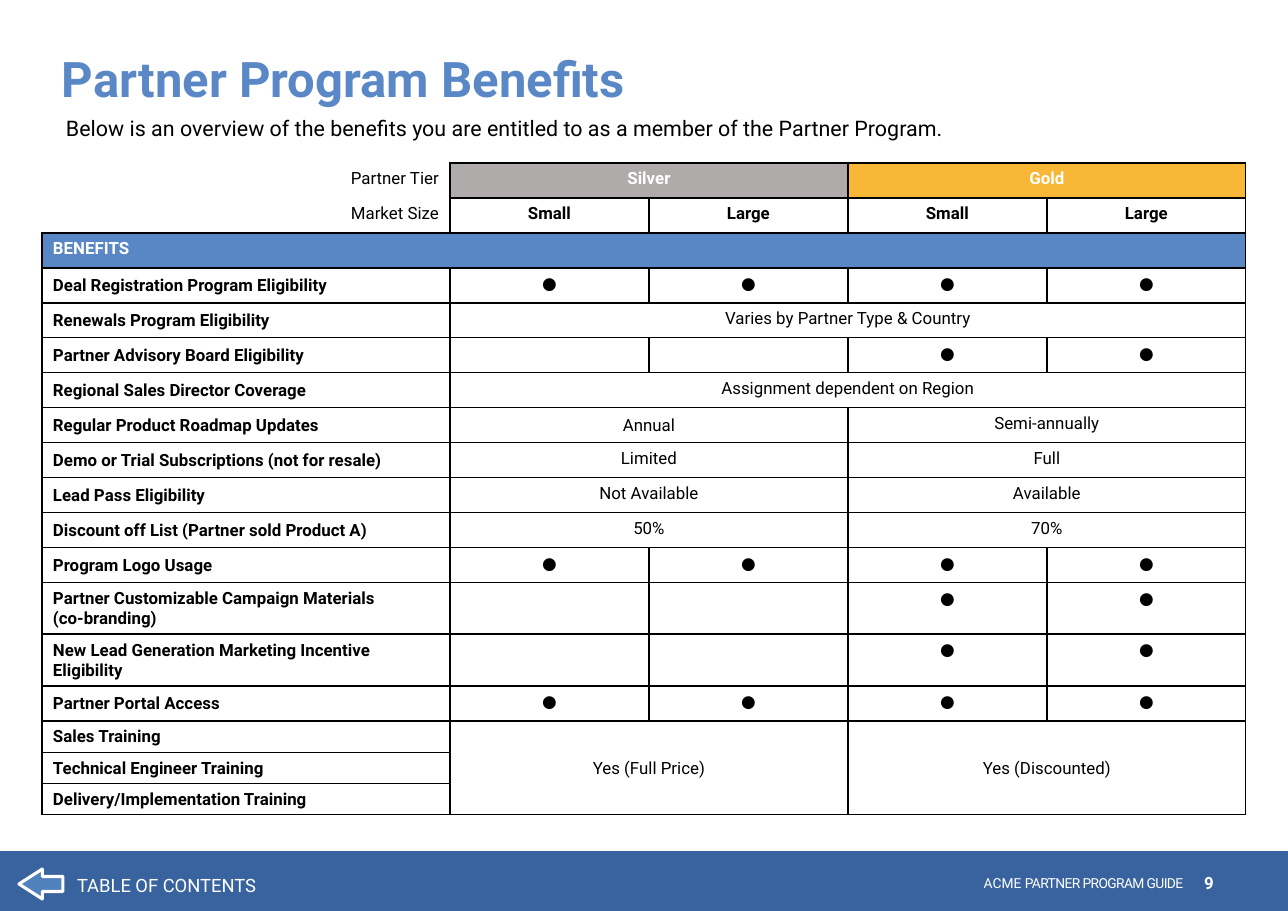
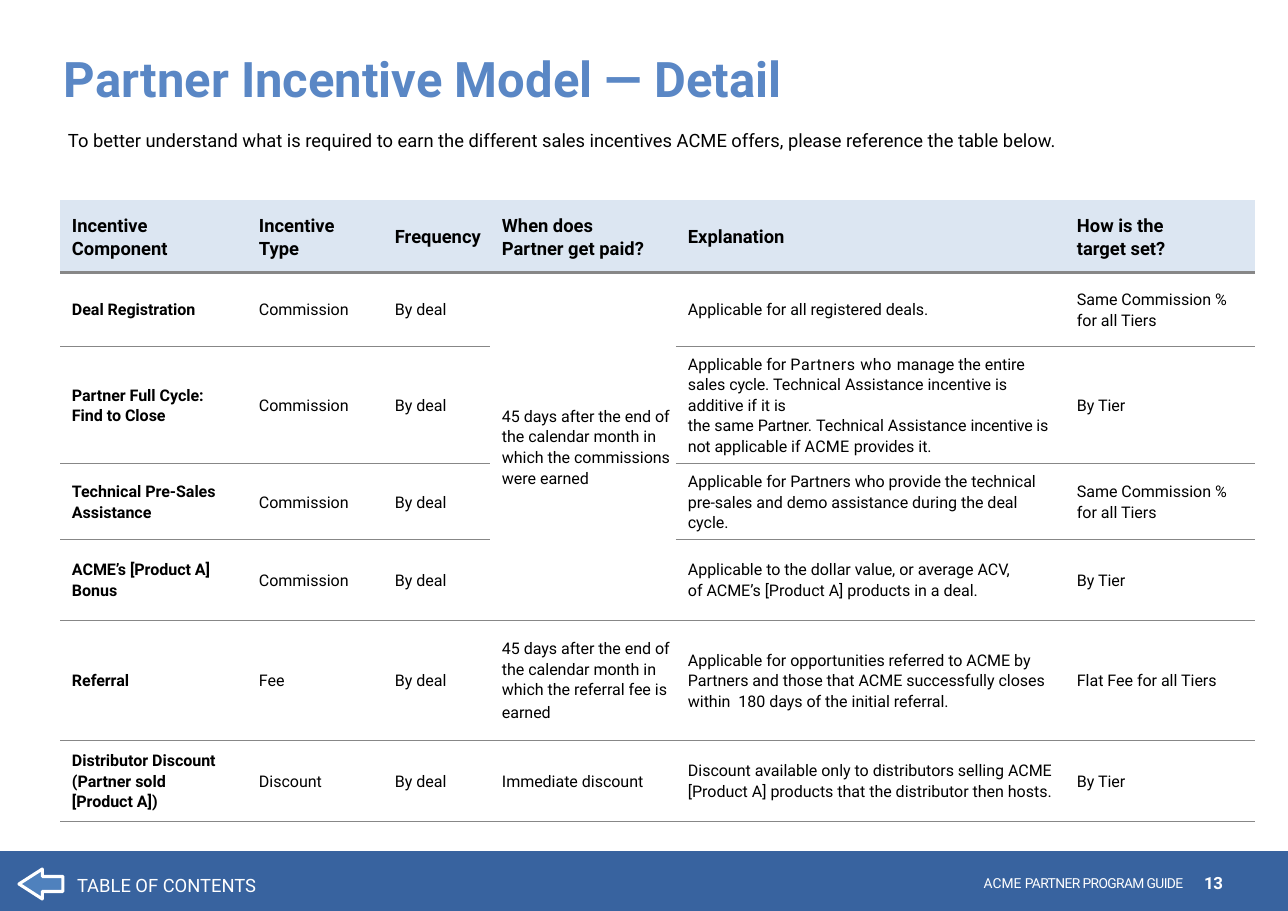
from pptx import Presentation
from pptx.dml.color import RGBColor
from pptx.enum.shapes import MSO_SHAPE
from pptx.enum.text import MSO_ANCHOR, MSO_AUTO_SIZE, PP_ALIGN
from pptx.oxml.ns import qn
from pptx.util import Emu, Pt
from lxml import etree

EMU_PX = 914400 / 110.2
WIDTH, HEIGHT = 1288, 911
FONT = "Roboto"
NO_GRID = "{2D5ABB26-0587-4C30-8999-92F81FD0307C}"
LEFT, CENTER, RIGHT = PP_ALIGN.LEFT, PP_ALIGN.CENTER, PP_ALIGN.RIGHT
TOP, MIDDLE = MSO_ANCHOR.TOP, MSO_ANCHOR.MIDDLE
RECT, ARROW = MSO_SHAPE.RECTANGLE, MSO_SHAPE.LEFT_ARROW
COLORS = {
    "title": "5A87C5", "band": "38639F", "arrow": "4F81BD", "white": "FFFFFF",
    "black": "000000", "silver": "AFABAB", "gold": "F8B737",
    "section": "5987C6", "head": "DCE6F2", "rule": "878787",
}

DOTS = ["●"] * 4
GOLD_DOTS = ["", "", "●", "●"]
# Each row: label, then values that share the four market columns evenly.
BENEFITS = [
    ("Deal Registration Program Eligibility", DOTS),
    ("Renewals Program Eligibility", ["Varies by Partner Type & Country"]),
    ("Partner Advisory Board Eligibility", GOLD_DOTS),
    ("Regional Sales Director Coverage", ["Assignment dependent on Region"]),
    ("Regular Product Roadmap Updates", ["Annual", "Semi-annually"]),
    ("Demo or Trial Subscriptions (not for resale)", ["Limited", "Full"]),
    ("Lead Pass Eligibility", ["Not Available", "Available"]),
    ("Discount off List (Partner sold Product A)", ["50%", "70%"]),
    ("Program Logo Usage", DOTS),
    (["Partner Customizable Campaign Materials", "(co-branding)"], GOLD_DOTS),
    ("New Lead Generation Marketing Incentive Eligibility", GOLD_DOTS),
    ("Partner Portal Access", DOTS),
    ("Sales Training", ["Yes (Full Price)", "Yes (Discounted)"]),
    ("Technical Engineer Training", []),
    ("Delivery/Implementation Training", []),
]

HEADS = ["Incentive Component", "Incentive Type", "Frequency",
         "When does\nPartner get paid?", "Explanation", "How is the\ntarget set?"]
SAME = "Same Commission %\nfor all Tiers"
FULL_CYCLE = [
    [("Applicable for ", 0), ("Partners who ", 0.4), ("manage the entire sales ", 0),
     ("cycle. ", -0.1), ("Technical Assistance incentive is additive if it ", 0),
     ("is", -0.2)],
    [("the same ", 0), ("Partner. ", -0.1), ("Technical Assistance ", 0),
     ("incentive is not ", -0.1), ("applicable if ", 0), ("ACME ", 0.2),
     ("provides it.", 0)],
]
# Each row: component, type, time of pay, explanation, target.
INCENTIVES = [
    ("Deal Registration", "Commission",
     "45 days after the end of the calendar month in which the commissions were earned",
     "Applicable for all registered deals.", SAME),
    (["Partner Full Cycle:", "Find to Close"], "Commission", "", FULL_CYCLE, "By Tier"),
    ("Technical Pre-Sales Assistance", "Commission", "",
     "Applicable for Partners who provide the technical\n"
     "pre-sales and demo assistance during the deal cycle.", SAME),
    ("ACME’s [Product A] Bonus", "Commission", "",
     "Applicable to the dollar value, or average ACV,\n"
     "of ACME’s [Product A] products in a deal.", "By Tier"),
    ("Referral", "Fee",
     ["45 days after the end of the calendar month in which the referral fee is", "earned"],
     "Applicable for opportunities referred to ACME by Partners and those that ACME "
     "successfully closes within  180 days of the initial referral.",
     "Flat Fee for all Tiers"),
    ("Distributor Discount (Partner sold\n[Product A])", "Discount", "Immediate discount",
     "Discount available only to distributors selling ACME [Product A] products "
     "that the distributor then hosts.", "By Tier"),
]


def px(num):
    return Emu(round(num * EMU_PX))


def rgb(name):
    return RGBColor.from_string(COLORS[name])


def write(frame, text, size, color="black", bold=False, align=LEFT, lead=None, gap=0):
    """Fill a frame; a list holds paragraphs, a nested list (run, spacing) pairs."""
    paras = text if isinstance(text, list) else [text]
    for i, part in enumerate(paras):
        para = frame.add_paragraph() if i else frame.paragraphs[0]
        if isinstance(part, list):
            for words, space in part:
                run = para.add_run()
                run.text = words
                run._r.get_or_add_rPr().set("spc", str(round(space * 100)))
        else:
            para.text = part
        para.alignment = align
        if lead:
            para.line_spacing = lead
        if i and gap:
            para.space_before = Pt(gap)
        font = para.font
        font.name, font.size, font.bold = FONT, Pt(size), bold
        font.color.rgb = rgb(color)
        if not part:
            para._p.get_or_add_endParaRPr().set("sz", str(round(size * 100)))


def inset(box, left, top, right, bottom):
    box.margin_left, box.margin_top = px(left), px(top)
    box.margin_right, box.margin_bottom = px(right), px(bottom)


def label(slide, text, x, y, w, h, size, pad=0, **style):
    frame = slide.shapes.add_textbox(px(x), px(y), px(w), px(h)).text_frame
    frame.word_wrap = True
    inset(frame, 0, pad, 0, pad)
    write(frame, text, size, **style)


def block(slide, kind, x, y, w, h, fill):
    shape = slide.shapes.add_shape(kind, px(x), px(y), px(w), px(h))
    shape.shadow.inherit = False
    shape.fill.solid()
    shape.fill.fore_color.rgb = rgb(fill)
    shape.line.fill.background()
    return shape


def head(slide, text, x):
    title = slide.shapes.title
    title.left, title.top, title.width, title.height = px(x), px(48), px(1168), px(60)
    frame = title.text_frame
    frame.auto_size = MSO_AUTO_SIZE.NONE
    frame.vertical_anchor = TOP
    inset(frame, 0, 1, 0, 0)
    write(frame, text, 32, "title", True)


def footer(slide, page):
    block(slide, RECT, 0, 851, WIDTH, 60, "band")
    arrow = block(slide, ARROW, 19, 869, 44, 30, "arrow")
    arrow.adjustments[0], arrow.adjustments[1] = 0.5, 0.78
    arrow.line.color.rgb = rgb("white")
    arrow.line.width = Pt(2)
    label(slide, "TABLE OF CONTENTS", 77, 868, 230, 33, 12, 6, color="white")
    label(slide, [[("ACME ", 0), ("PARTNER PROGRAM GUIDE", -0.4)]], 864, 877, 319, 14, 9,
          color="white", align=RIGHT, lead=Pt(9.3))
    label(slide, [[(page, -0.2)]], 1204, 876, 30, 18, 11,
          color="white", bold=True, lead=Pt(11.2))


def grid(slide, x, y, cols, rows):
    """Add a plain table with the given column widths and row heights."""
    table = slide.shapes.add_table(len(rows), len(cols), px(x), px(y),
                                   px(sum(cols)), px(sum(rows))).table
    table._tbl.tblPr.find(qn("a:tableStyleId")).text = NO_GRID
    table.first_row = table.horz_banding = False
    for col, size in zip(table.columns, cols):
        col.width = px(size)
    for row, size in zip(table.rows, rows):
        row.height = px(size)
    return table


def border(cell, sides, color, width):
    props = cell._tc.get_or_add_tcPr()
    for side in sides:
        line = etree.SubElement(props, qn("a:ln" + side), w=str(Pt(width)))
        fill = etree.SubElement(line, qn("a:solidFill"))
        etree.SubElement(fill, qn("a:srgbClr"), val=COLORS[color])


def paint(cell, fill):
    if fill:
        cell.fill.solid()
        cell.fill.fore_color.rgb = rgb(fill)
    else:
        cell.fill.background()


def spread(table, row, values, deep=1, fills=(None, None), anchor=TOP, **style):
    """Share the four market columns evenly among the values."""
    step = 4 // max(len(values), 1)
    for i, text in enumerate(values):
        col = 1 + i * step
        cell = table.cell(row, col)
        if step * deep > 1:
            cell.merge(table.cell(row + deep - 1, col + step - 1))
        cell.vertical_anchor = MIDDLE if text == "Annual" else anchor
        write(cell.text_frame, text, 11, align=CENTER, **style)
        if fills[i % 2]:
            paint(cell, fills[i % 2])


def benefits(slide):
    rows = [35] * 12 + [51, 52, 35] + [31] * 3
    table = grid(slide, 42, 163, [408] + [199] * 4, rows)
    for r in range(len(rows)):
        for c in range(5):
            cell = table.cell(r, c)
            sides = "LRTB" if c or r > 1 else ("R", "RB")[r]
            border(cell, sides, "black", 1)
            paint(cell, None)
            inset(cell, 11, 6, 11, 5)
    for r, text in enumerate(["Partner Tier", "Market Size"]):
        write(table.cell(r, 0).text_frame, text, 11, align=RIGHT)
    spread(table, 0, ["Silver", "Gold"], fills=("silver", "gold"),
           color="white", bold=True)
    spread(table, 1, ["Small", "Large"] * 2, bold=True)
    bar = table.cell(2, 0)
    bar.merge(table.cell(2, 4))
    paint(bar, "section")
    write(bar.text_frame, "BENEFITS", 11, "white", True)
    for r, (name, values) in enumerate(BENEFITS, 3):
        cell = table.cell(r, 0)
        cell.vertical_anchor = MIDDLE
        write(cell.text_frame, name, 11, bold=True)
        train = name == "Sales Training"
        spread(table, r, values, 3 if train else 1, anchor=MIDDLE if train else TOP)


def incentives(slide):
    rows = [73, 73, 117, 74, 81, 120, 81]
    table = grid(slide, 60, 200, [187, 136, 107, 186, 389, 190], rows)
    body = [(name, kind, "By deal", *rest) for name, kind, *rest in INCENTIVES]
    for r, line in enumerate([HEADS] + body):
        for c, text in enumerate(line):
            cell = table.cell(r, c)
            border(cell, "B", "rule", 0.5 if r else 2.25)
            paint(cell, None if r else "head")
            cell.vertical_anchor = MIDDLE
            inset(cell, 12, 6, 5, 6)
            write(cell.text_frame, text, 10.5 if r else 12, bold=not (r and c),
                  lead=1.1, gap=1.6 if c == 3 else 0)
    table.cell(1, 3).merge(table.cell(4, 3))


def main():
    deck = Presentation()
    deck.slide_width, deck.slide_height = px(WIDTH), px(HEIGHT)
    pages = [
        ("9", "Partner Program Benefits", 62,
         "Below is an overview of the benefits you are entitled to as a member "
         "of the Partner Program.", 66, 109, 14, benefits),
        ("13", "Partner Incentive Model — Detail", 64,
         "To better understand what is required to earn the different sales incentives "
         "ACME offers, please reference the table below.", 68, 123, 12, incentives),
    ]
    for page, title, left, intro, x, y, size, build in pages:
        slide = deck.slides.add_slide(deck.slide_layouts[5])
        footer(slide, page)
        head(slide, title, left)
        label(slide, intro, x, y, 1160, 36, size, 6)
        build(slide)
    deck.save("out.pptx")


if __name__ == "__main__":
    main()
